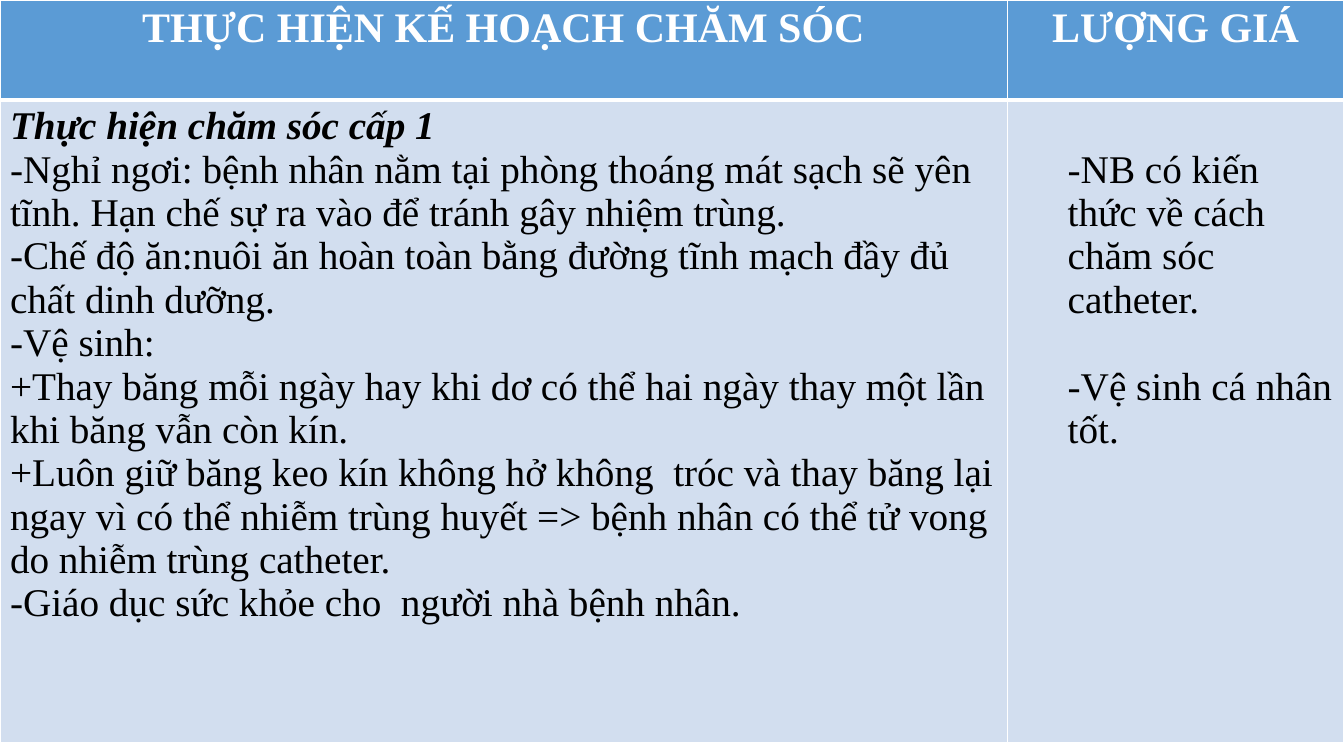
from dataclasses import dataclass

from lxml import etree
from pptx import Presentation
from pptx.dml.color import RGBColor
from pptx.enum.text import PP_ALIGN
from pptx.oxml.ns import qn
from pptx.util import Inches, Pt

LEFT, CENTER = PP_ALIGN.LEFT, PP_ALIGN.CENTER


@dataclass(frozen=True)
class Theme:
    font: str = "Times New Roman"
    header_size: int = 30
    body_size: int = 28
    header_fill: str = "5B9BD5"
    body_fill: str = "D2DEEF"
    white: str = "FFFFFF"
    black: str = "000000"
    thin: int = 1
    thick: int = 3
    item_gap: int = 31


THEME = Theme()
COLUMN_WIDTHS = (9.99, 3.34)
ROW_HEIGHTS = (0.99, 6.38)
HEADINGS = ("THỰC HIỆN KẾ HOẠCH CHĂM SÓC", "LƯỢNG GIÁ")
CARE_TITLE = "Thực hiện chăm sóc cấp 1"
CARE_STEPS = (
    "-Nghỉ ngơi: bệnh nhân nằm tại phòng thoáng mát sạch sẽ yên tĩnh. Hạn chế sự ra vào để tránh gây nhiệm trùng.",
    "-Chế độ ăn:nuôi ăn hoàn toàn bằng đường tĩnh mạch đầy đủ chất dinh dưỡng.",
    "-Vệ sinh:",
    "+Thay băng mỗi ngày hay khi dơ có thể hai ngày thay một lần khi băng vẫn còn kín.",
    "+Luôn giữ băng keo kín không hở không  tróc và thay băng lại ngay vì có thể nhiễm trùng huyết => bệnh nhân có thể tử vong do nhiễm trùng catheter.",
    "-Giáo dục sức khỏe cho  người nhà bệnh nhân.",
)
EVALUATIONS = (
    "-NB có kiến thức về cách chăm sóc catheter.",
    "-Vệ sinh cá nhân tốt.",
)


def write(para, text, size=THEME.body_size, color=THEME.black, bold=False,
          italic=False, align=LEFT, before=0, indent=0):
    para.alignment = align
    para.space_before = Pt(before)
    if indent:
        properties = para._p.get_or_add_pPr()
        properties.set("marL", str(Inches(indent)))
        properties.set("indent", "0")
    span = para.add_run()
    span.text = text
    font = span.font
    font.name, font.size = THEME.font, Pt(size)
    font.bold, font.italic = bold, italic
    font.color.rgb = RGBColor.from_string(color)


def write_list(frame, items, **style):
    for index, text in enumerate(items):
        para = frame.add_paragraph() if index else frame.paragraphs[0]
        options = dict(style)
        if not index:
            options["before"] = 0
        write(para, text, **options)


def style_cell(cell, fill, top, bottom):
    cell.fill.solid()
    cell.fill.fore_color.rgb = RGBColor.from_string(fill)
    properties = cell._tc.get_or_add_tcPr()
    widths = {"lnL": THEME.thin, "lnR": THEME.thin, "lnT": top, "lnB": bottom}
    for index, (side, width) in enumerate(widths.items()):
        line = etree.Element(qn(f"a:{side}"), w=str(Pt(width)))
        paint = etree.SubElement(line, qn("a:solidFill"))
        etree.SubElement(paint, qn("a:srgbClr"), val=THEME.white)
        properties.insert(index, line)


def fill_header(cells):
    for cell, heading in zip(cells, HEADINGS):
        style_cell(cell, THEME.header_fill, THEME.thin, THEME.thick)
        write(cell.text_frame.paragraphs[0], heading, size=THEME.header_size,
              color=THEME.white, bold=True, align=CENTER)


def fill_body(cells):
    for cell in cells:
        style_cell(cell, THEME.body_fill, THEME.thick, THEME.thin)
    care, evaluation = cells
    write(care.text_frame.paragraphs[0], CARE_TITLE, bold=True, italic=True)
    for step in CARE_STEPS:
        write(care.text_frame.add_paragraph(), step)
    evaluation.margin_top = Inches(0.48)
    write_list(evaluation.text_frame, EVALUATIONS, indent=0.5,
               before=THEME.item_gap)


def add_care_table(page, left, top, widths, heights):
    frame = page.shapes.add_table(
        len(heights), len(widths), Inches(left), Inches(top),
        Inches(sum(widths)), Inches(sum(heights)))
    table = frame.table
    table.horz_banding = False
    for column, width in zip(table.columns, widths):
        column.width = Inches(width)
    for row, height in zip(table.rows, heights):
        row.height = Inches(height)
    header, body = table.rows
    fill_header(header.cells)
    fill_body(body.cells)


def main():
    deck = Presentation()
    deck.slide_width, deck.slide_height = Inches(13.33), Inches(7.5)
    page = deck.slides.add_slide(deck.slide_layouts[6])
    add_care_table(page, 0, 0, COLUMN_WIDTHS, ROW_HEIGHTS)
    deck.save("out.pptx")


if __name__ == "__main__":
    main()
